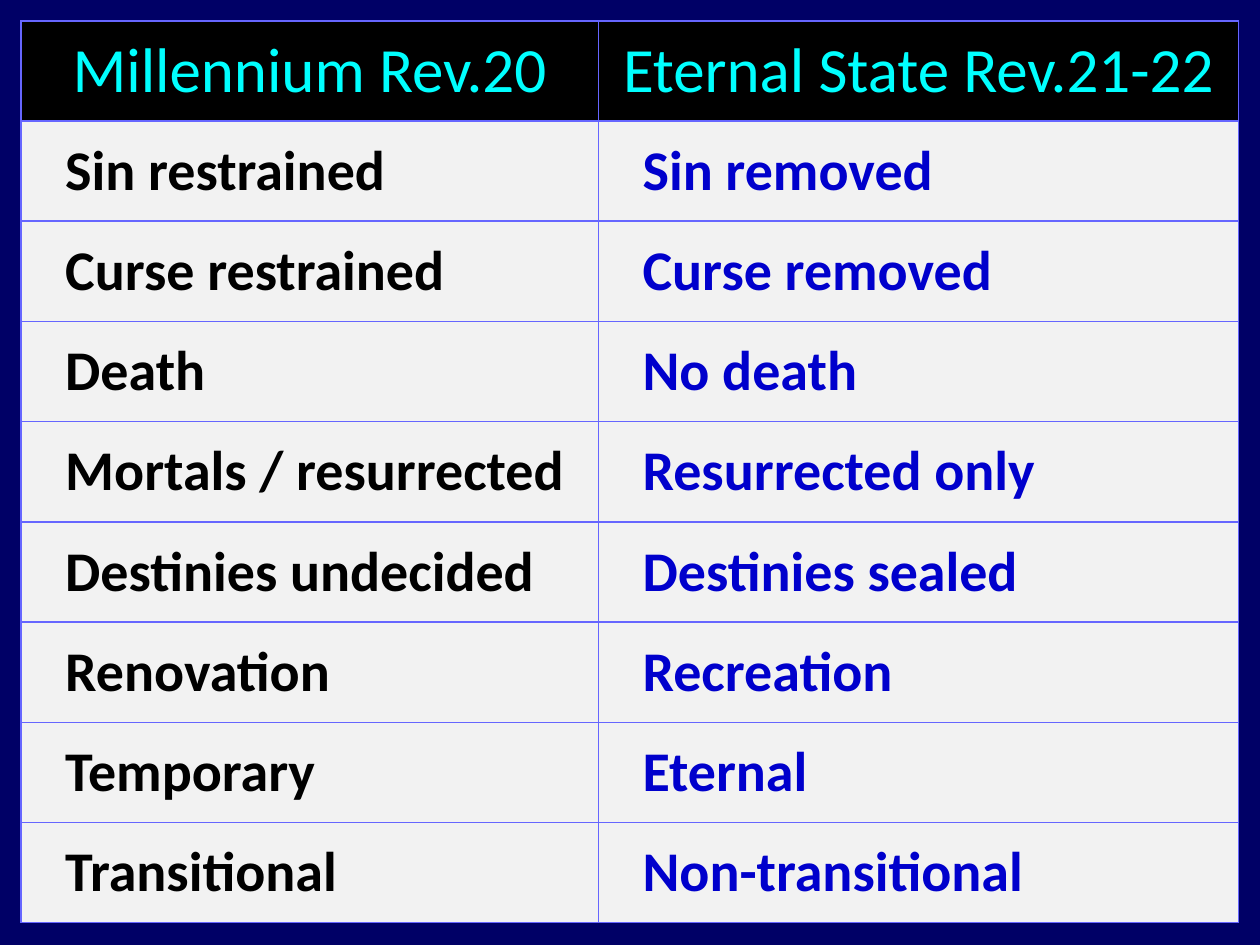
from lxml import etree
from pptx import Presentation, util as u
from pptx.dml.color import RGBColor
from pptx.enum import text
from pptx.oxml import ns

NAVY = RGBColor(0x00, 0x00, 0x66)
BLACK = RGBColor(0x00, 0x00, 0x00)
CYAN = RGBColor(0x00, 0xFF, 0xFF)
PALE = RGBColor(0xF2, 0xF2, 0xF2)
BLUE = RGBColor(0x00, 0x00, 0xCC)
LILAC = RGBColor(0x66, 0x66, 0xFF)

HEADS = ("Millennium Rev.20", "Eternal State Rev.21-22")
ROWS = (
    ("Sin restrained", "Sin removed"),
    ("Curse restrained", "Curse removed"),
    ("Death", "No death"),
    ("Mortals / resurrected", "Resurrected only"),
    ("Destinies undecided", "Destinies sealed"),
    ("Renovation", "Recreation"),
    ("Temporary", "Eternal"),
    ("Transitional", "Non-transitional"),
)


def write(frame, words, size=32, color=BLACK, bold=False, align=None, indent=0):
    para = frame.paragraphs[0]
    para.alignment = align
    if indent:
        props = para._p.get_or_add_pPr()
        props.set("marL", str(u.Cm(indent)))
        props.set("indent", "0")
    run = para.add_run()
    run.text = words
    font = run.font
    font.name = "Calibri"
    font.size = u.Pt(size)
    font.bold = bold
    font.color.rgb = color


class Deck:
    def __init__(self, slide, edge=LILAC, width=1):
        self.slide = slide
        self.edge = edge
        self.width = width

    def back(self, color):
        fill = self.slide.background.fill
        fill.solid()
        fill.fore_color.rgb = color

    def border(self, cell):
        props = cell._tc.get_or_add_tcPr()
        for spot, side in enumerate(("lnL", "lnR", "lnT", "lnB")):
            line = etree.Element(ns.qn("a:" + side), w=str(u.Pt(self.width)))
            fill = etree.SubElement(line, ns.qn("a:solidFill"))
            etree.SubElement(fill, ns.qn("a:srgbClr"), val=str(self.edge))
            props.insert(spot, line)

    def cell(self, cell, words, fill, **style):
        cell.vertical_anchor = text.MSO_ANCHOR.MIDDLE
        cell.fill.solid()
        cell.fill.fore_color.rgb = fill
        self.border(cell)
        write(cell.text_frame, words, **style)

    def table(self, heads, rows, left, top, widths, height):
        count = len(rows) + 1
        table = self.slide.shapes.add_table(
            count, len(heads), u.Cm(left), u.Cm(top),
            u.Cm(sum(widths)), u.Cm(height * count)).table
        for col, width in zip(table.columns, widths):
            col.width = u.Cm(width)
        for row in table.rows:
            row.height = u.Cm(height)
        for c, head in enumerate(heads):
            self.cell(table.cell(0, c), head, BLACK, size=36, color=CYAN,
                      align=text.PP_ALIGN.CENTER)
        for r, row in enumerate(rows, 1):
            for c, (words, color) in enumerate(zip(row, (BLACK, BLUE))):
                self.cell(table.cell(r, c), words, PALE, color=color,
                          bold=True, indent=0.64)


def main():
    show = Presentation()
    show.slide_width = u.Cm(25.4)
    show.slide_height = u.Cm(19.05)
    deck = Deck(show.slides.add_slide(show.slide_layouts[6]))
    deck.back(NAVY)
    deck.table(HEADS, ROWS, 0.42, 0.42, (11.64, 12.91), 2.02)
    show.save("out.pptx")


if __name__ == "__main__":
    main()
